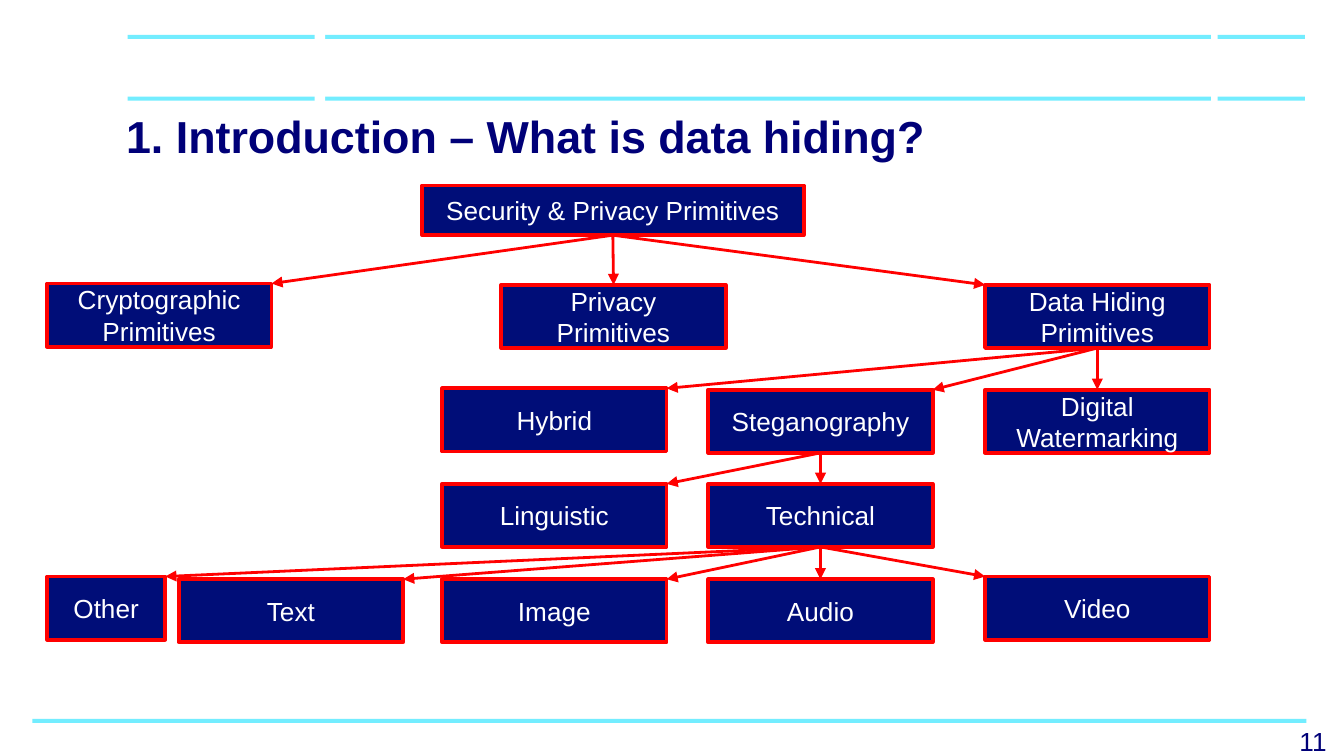
import pptx
import pptx.dml.color
import pptx.enum.shapes
import pptx.enum.text
import pptx.oxml.ns
import pptx.util
from lxml import etree

Inches = pptx.util.Inches
Pt = pptx.util.Pt

COLORS = {
    "background": "FFFFFF",
    "bar": "73EDFF",
    "text": "000078",
    "box": "000D78",
    "box_text": "FFFFFF",
    "line": "FF0000",
}
FONT = "Arial"
BOX_WIDTH = 1.67
BOX_HEIGHT = 0.47
BAR_HEIGHT = 0.03
HEADER_TOPS = (0.72, 0.26)
HEADER_SPANS = ((0.95, 8.06), (9.06, 0.65))

BOXES = {
    "root": (3.14, 1.38, 2.84, 0.37, ["Security & Privacy Primitives"]),
    "cryptographic": (0.35, 2.11, BOX_WIDTH, BOX_HEIGHT, ["Cryptographic", "Primitives"]),
    "privacy": (3.73, 2.12, BOX_WIDTH, BOX_HEIGHT, ["Privacy", "Primitives"]),
    "hiding": (7.33, 2.12, BOX_WIDTH, BOX_HEIGHT, ["Data Hiding", "Primitives"]),
    "hybrid": (3.29, 2.89, BOX_WIDTH, BOX_HEIGHT, ["Hybrid"]),
    "steganography": (5.27, 2.9, BOX_WIDTH, BOX_HEIGHT, ["Steganography"]),
    "watermarking": (7.33, 2.9, BOX_WIDTH, BOX_HEIGHT, ["Digital Watermarking"]),
    "linguistic": (3.29, 3.6, BOX_WIDTH, BOX_HEIGHT, ["Linguistic"]),
    "technical": (5.27, 3.6, BOX_WIDTH, BOX_HEIGHT, ["Technical"]),
    "other": (0.35, 4.29, 0.88, BOX_HEIGHT, ["Other"]),
    "text": (1.33, 4.31, BOX_WIDTH, BOX_HEIGHT, ["Text"]),
    "image": (3.29, 4.31, BOX_WIDTH, BOX_HEIGHT, ["Image"]),
    "audio": (5.27, 4.31, BOX_WIDTH, BOX_HEIGHT, ["Audio"]),
    "video": (7.33, 4.29, BOX_WIDTH, BOX_HEIGHT, ["Video"]),
}
CHILDREN = {
    "root": ["cryptographic", "privacy", "hiding"],
    "hiding": ["hybrid", "steganography", "watermarking"],
    "steganography": ["linguistic", "technical"],
    "technical": ["other", "text", "image", "audio", "video"],
}


def rgb(name):
    return pptx.dml.color.RGBColor.from_string(COLORS[name])


def add_run(paragraph, text, size, color, bold=False):
    run = paragraph.add_run()
    run.text = text
    run.font.name = FONT
    run.font.size = Pt(size)
    run.font.bold = bold
    run.font.color.rgb = rgb(color)


def add_rectangle(slide, left, top, width, height, color):
    shape = slide.shapes.add_shape(
        pptx.enum.shapes.MSO_SHAPE.RECTANGLE,
        Inches(left), Inches(top), Inches(width), Inches(height),
    )
    shape.shadow.inherit = False
    shape.fill.solid()
    shape.fill.fore_color.rgb = rgb(color)
    shape.line.fill.background()
    return shape


def add_text(slide, left, top, width, height, text, size, bold=False):
    text_box = slide.shapes.add_textbox(
        Inches(left), Inches(top), Inches(width), Inches(height)
    )
    frame = text_box.text_frame
    frame.word_wrap = True
    add_run(frame.paragraphs[0], text, size, "text", bold)
    return frame


def add_box(slide, left, top, width, height, lines):
    shape = add_rectangle(slide, left, top, width, height, "box")
    shape.line.color.rgb = rgb("line")
    shape.line.width = Pt(2)
    frame = shape.text_frame
    frame.word_wrap = True
    frame.vertical_anchor = pptx.enum.text.MSO_ANCHOR.MIDDLE
    for index, line in enumerate(lines):
        paragraph = frame.add_paragraph() if index else frame.paragraphs[0]
        paragraph.alignment = pptx.enum.text.PP_ALIGN.CENTER
        add_run(paragraph, line, 14, "box_text")
    return shape


def add_arrow(slide, parent, child):
    parent_center = parent.left + parent.width // 2
    child_center = child.left + child.width // 2
    corner = child.left + child.width if child_center < parent_center else child.left
    connector = slide.shapes.add_connector(
        pptx.enum.shapes.MSO_CONNECTOR.STRAIGHT,
        parent_center, parent.top + parent.height, corner, child.top,
    )
    connector.begin_connect(parent, 2)
    if abs(child_center - parent_center) < Inches(0.02):
        connector.end_connect(child, 0)
    connector.line.color.rgb = rgb("line")
    connector.line.width = Pt(1.5)
    line = connector.line._get_or_add_ln()
    etree.SubElement(line, pptx.oxml.ns.qn("a:tailEnd"), type="triangle")
    etree.SubElement(connector._element.spPr, pptx.oxml.ns.qn("a:effectLst"))


def add_bars(slide):
    add_rectangle(slide, 0.24, 5.35, 9.48, BAR_HEIGHT, "bar")
    for left, width in HEADER_SPANS:
        for top in HEADER_TOPS:
            add_rectangle(slide, left, top, width, BAR_HEIGHT, "bar")
    add_rectangle(slide, 2.34, 0.13, 0.08, 0.88, "background")


def main():
    presentation = pptx.Presentation()
    presentation.slide_width = Inches(10)
    presentation.slide_height = Inches(10) * 9 // 16
    slide = presentation.slides.add_slide(presentation.slide_layouts[6])

    add_bars(slide)
    title = add_text(
        slide, 0.84, 0.71, 8.86, 0.85, "1. Introduction – What is data hiding?", 24, True
    )
    title.margin_left = title.margin_right = Inches(0.1)
    title.margin_top = title.margin_bottom = Inches(0.1)
    add_text(slide, 9.57, 5.35, 0.43, 0.34, "11", 14)

    boxes = {name: add_box(slide, *box) for name, box in BOXES.items()}
    for parent, children in CHILDREN.items():
        for child in children:
            add_arrow(slide, boxes[parent], boxes[child])

    presentation.save("out.pptx")


if __name__ == "__main__":
    main()
